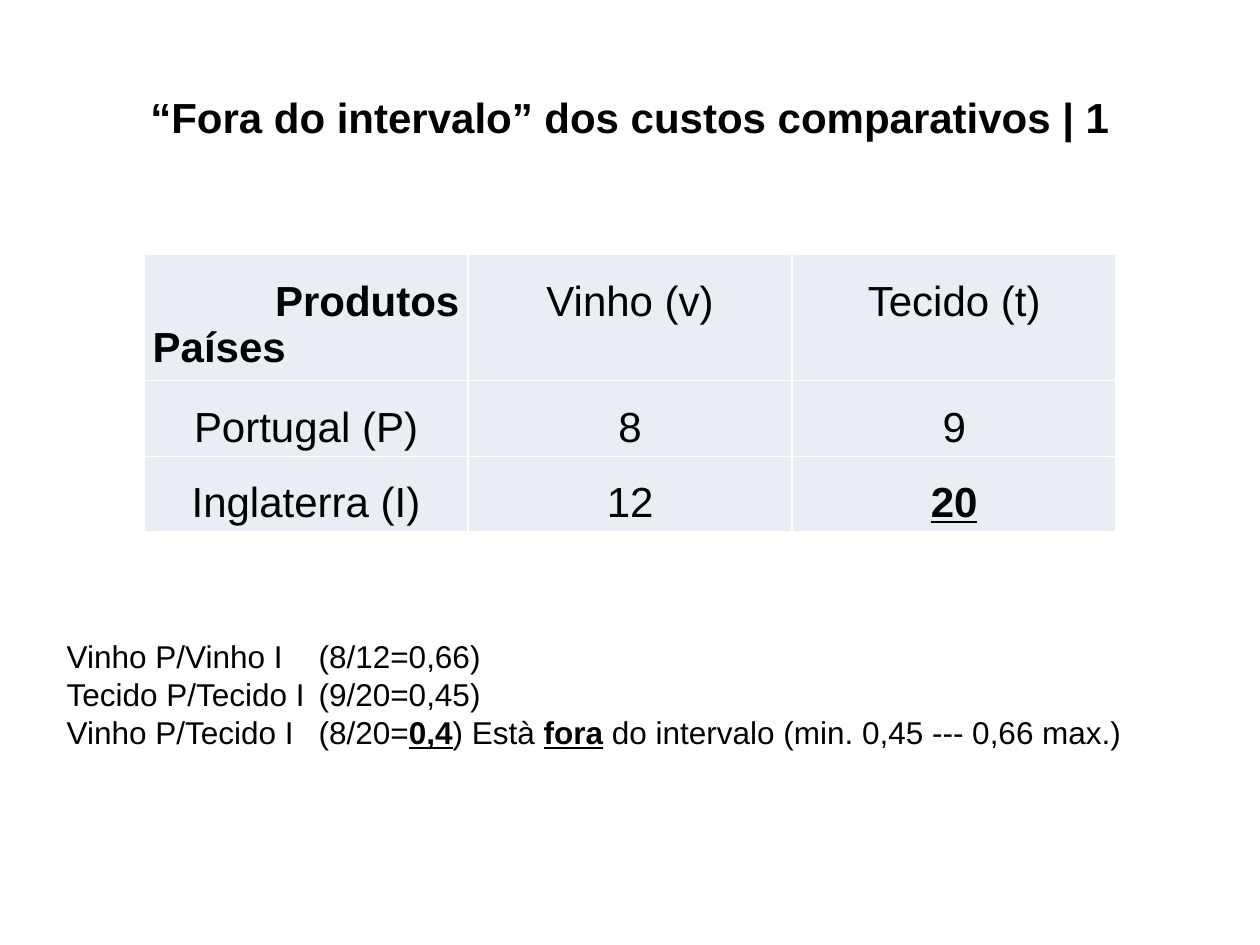
from dataclasses import dataclass

from lxml.etree import SubElement
from pptx import Presentation
from pptx.dml.color import RGBColor
from pptx.enum.text import MSO_ANCHOR, MSO_AUTO_SIZE, PP_ALIGN
from pptx.oxml.ns import qn
from pptx.util import Pt


@dataclass(frozen=True)
class Theme:
    """Colours, font and type sizes of the slide."""
    ink: str = "000000"
    cell: str = "E9EDF4"
    rule: str = "FFFFFF"
    font: str = "Arial"
    large: int = 24
    body: int = 18


THEME = Theme()
STRONG = {"bold": True, "underline": True}
COSTS = [
    ["Vinho (v)", "Tecido (t)"],
    ["Portugal (P)", "8", "9"],
    ["Inglaterra (I)", "12", "20"],
]
RATIOS = [
    [("Vinho P/Vinho I \t(8/12=0,66)", {})],
    [("Tecido P/Tecido I \t(9/20=0,45)", {})],
    [("Vinho P/Tecido I \t(8/20=", {}), ("0,4", STRONG), (") Està ", {}),
     ("fora", STRONG), (" do intervalo (min. 0,45 --- 0,66 max.)", {})],
]


def add_text(paragraph, text, size=THEME.large, bold=False, underline=False, align=None):
    """Append a formatted run to a paragraph."""
    if align is not None:
        paragraph.alignment = align
    run = paragraph.add_run()
    run.text = text
    font = run.font
    font.name, font.size = THEME.font, Pt(size)
    font.bold, font.underline = bold, underline
    font.color.rgb = RGBColor.from_string(THEME.ink)


def space(paragraph, before=6, after=6):
    """Give a table paragraph its open line spacing."""
    paragraph.line_spacing = 1.5
    paragraph.space_before, paragraph.space_after = Pt(before), Pt(after)


def style_cell(cell):
    """Set the margins, white borders and fill of a cell."""
    cell.margin_left = cell.margin_right = Pt(5)
    cell.margin_top = cell.margin_bottom = Pt(0)
    cell.vertical_anchor = MSO_ANCHOR.TOP
    properties = cell._tc.get_or_add_tcPr()
    for side in ("a:lnL", "a:lnR", "a:lnT", "a:lnB"):
        border = SubElement(properties, qn(side), w=str(Pt(1)))
        paint = SubElement(border, qn("a:solidFill"))
        SubElement(paint, qn("a:srgbClr"), val=THEME.rule)
    cell.fill.solid()
    cell.fill.fore_color.rgb = RGBColor.from_string(THEME.cell)


def fill_corner(cell):
    """Write the two axis names in the corner cell."""
    products = cell.text_frame.paragraphs[0]
    space(products, after=0)
    products._p.get_or_add_pPr().set("marL", str(Pt(36)))
    add_text(products, "Produtos", bold=True, align=PP_ALIGN.RIGHT)
    countries = cell.text_frame.add_paragraph()
    add_text(countries, "Países", bold=True, align=PP_ALIGN.LEFT)


def add_title(slide, left, top, width, height):
    """Place the centred slide title."""
    frame = slide.shapes.add_textbox(Pt(left), Pt(top), Pt(width), Pt(height)).text_frame
    frame.word_wrap = True
    frame.vertical_anchor = MSO_ANCHOR.MIDDLE
    add_text(frame.paragraphs[0], "“Fora do intervalo” dos custos comparativos | 1",
             bold=True, align=PP_ALIGN.CENTER)


def add_cost_table(slide, left, top, width, row_heights):
    """Place the table of costs by country and product."""
    table = slide.shapes.add_table(len(row_heights), 3, Pt(left), Pt(top),
                                   Pt(width), Pt(sum(row_heights))).table
    table.first_row = table.horz_banding = False
    for column in table.columns:
        column.width = Pt(width / 3)
    for row, height in zip(table.rows, row_heights):
        row.height = Pt(height)
    for cell in table.iter_cells():
        style_cell(cell)
    fill_corner(table.cell(0, 0))
    for row_index, costs in enumerate(COSTS):
        for column_index, cost in enumerate(costs, start=3 - len(costs)):
            paragraph = table.cell(row_index, column_index).text_frame.paragraphs[0]
            space(paragraph)
            emphasis = STRONG if cost == "20" else {}
            add_text(paragraph, cost, align=PP_ALIGN.CENTER, **emphasis)


def add_ratios(slide, left, top, width, height):
    """Place the lines that compare the cost ratios."""
    frame = slide.shapes.add_textbox(Pt(left), Pt(top), Pt(width), Pt(height)).text_frame
    frame.word_wrap = True
    frame.auto_size = MSO_AUTO_SIZE.SHAPE_TO_FIT_TEXT
    for index, ratio in enumerate(RATIOS):
        paragraph = frame.add_paragraph() if index else frame.paragraphs[0]
        for text, emphasis in ratio:
            add_text(paragraph, text, size=THEME.body, **emphasis)


def main():
    """Build and save the slide."""
    deck = Presentation()
    deck.slide_width, deck.slide_height = Pt(720), Pt(540)
    slide = deck.slides.add_slide(deck.slide_layouts[6])
    add_title(slide, 36, 21.6, 648, 90)
    add_cost_table(slide, 82.3, 145.5, 555.6, [66.5, 40, 40])
    add_ratios(slide, 31, 360.7, 652.3, 72.7)
    deck.save("out.pptx")


if __name__ == "__main__":
    main()
